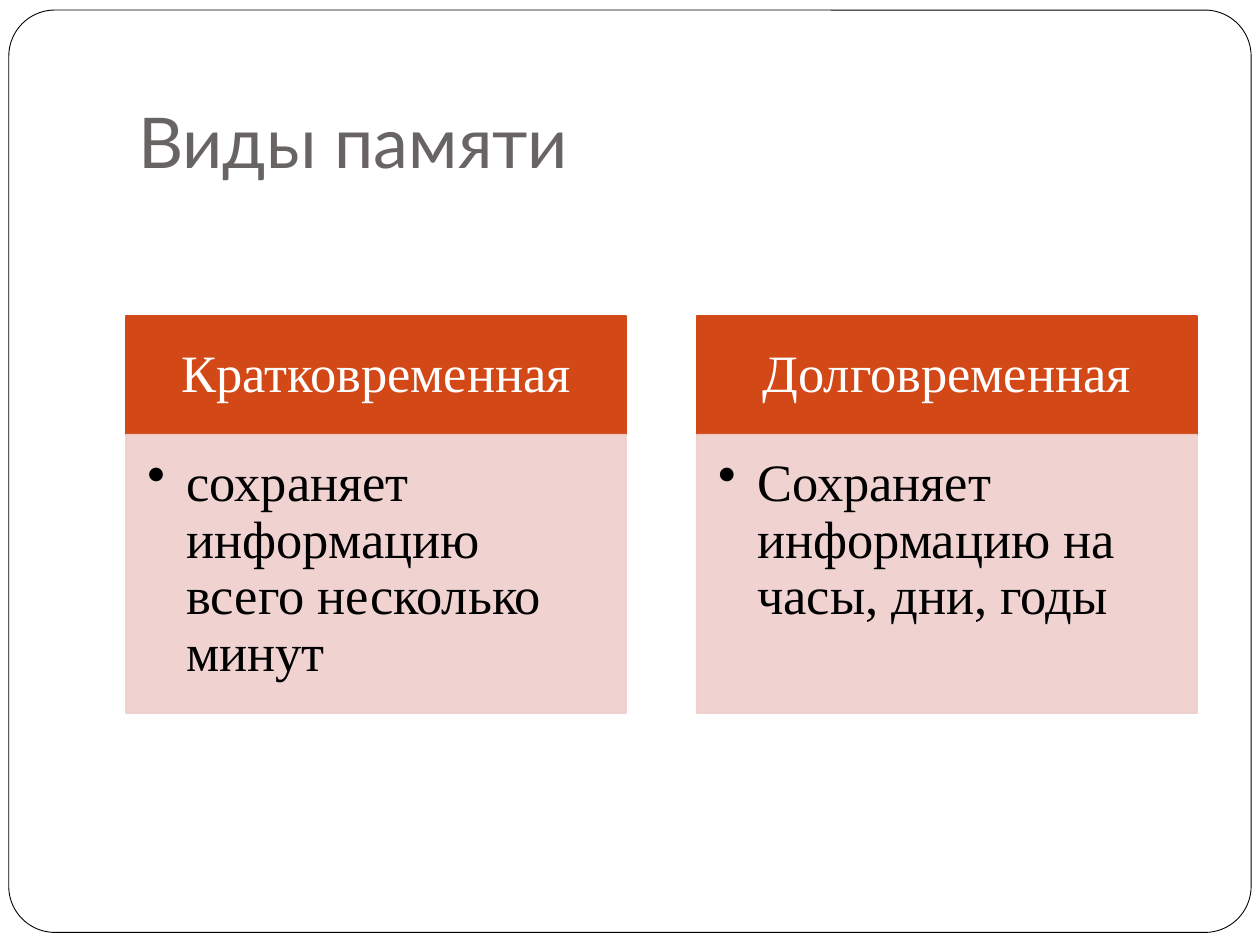
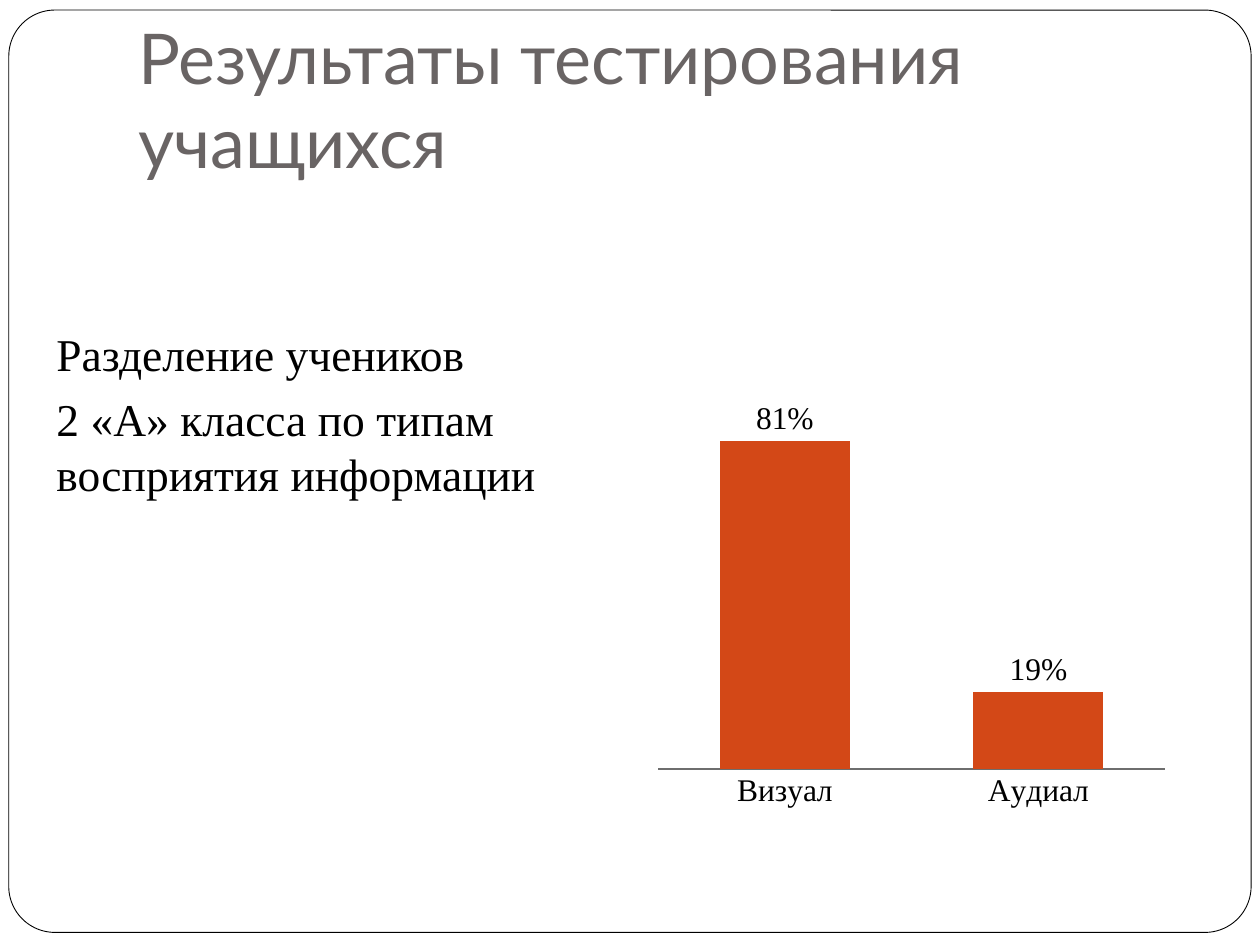
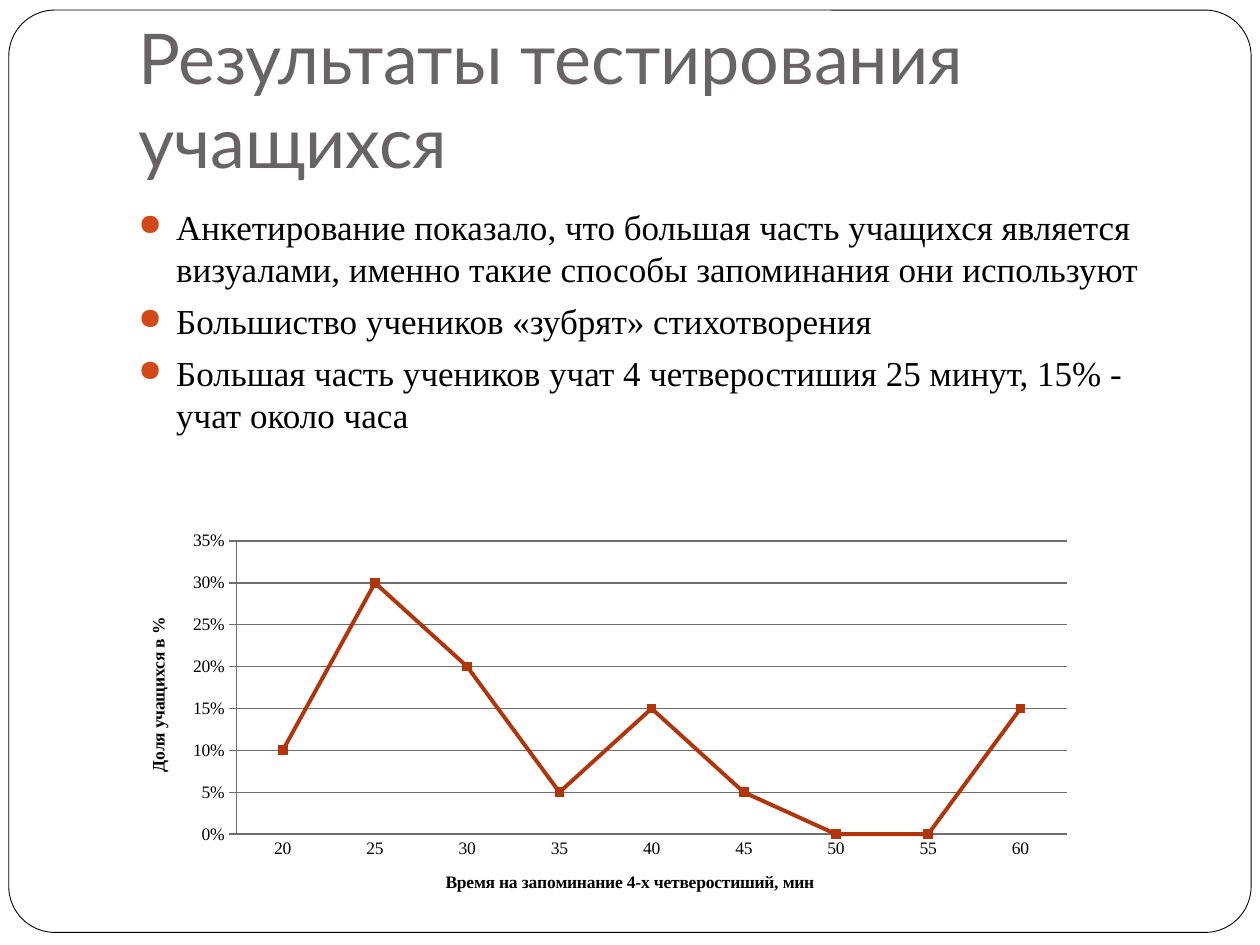
from lxml import etree
from pptx import Presentation
from pptx import util as u
from pptx.chart import data
from pptx.dml import color
from pptx.enum import chart as ch
from pptx.enum import shapes, text
from pptx.oxml import ns

ORANGE, PINK, GRAY, BLACK, WHITE = "D34817", "EFCFCC", "696464", "000000", "FFFFFF"
RUST, AXIS = "B1340B", "6E6E6E"
SERIF = "Times New Roman"


def rgb(value):
    return color.RGBColor.from_string(value)


def write(tf, lines, size, fill, font=SERIF, insets=(0.1, 0.05, 0.1, 0.05),
          anchor=text.MSO_ANCHOR.TOP, align=text.PP_ALIGN.LEFT,
          before=0, spacing=1.0, bullet=None, indent=0, bullet_fill=BLACK, bullet_size=100):
    tf.word_wrap = True
    tf.vertical_anchor = anchor
    tf.margin_left, tf.margin_top, tf.margin_right, tf.margin_bottom = map(u.Inches, insets)
    for i, line in enumerate(lines):
        p = tf.add_paragraph() if i else tf.paragraphs[0]
        p.alignment = align
        p.line_spacing = spacing
        p.space_before = u.Pt(before)
        if bullet:
            pPr = p._p.get_or_add_pPr()
            pPr.set("marL", str(u.Inches(indent)))
            pPr.set("indent", str(-u.Inches(indent)))
            buClr = etree.SubElement(pPr, ns.qn("a:buClr"))
            etree.SubElement(buClr, ns.qn("a:srgbClr"), val=bullet_fill)
            etree.SubElement(pPr, ns.qn("a:buSzPct"), val=str(bullet_size * 1000))
            etree.SubElement(pPr, ns.qn("a:buChar"), char=bullet)
        r = p.add_run()
        r.text = line
        r.font.name = font
        r.font.size = u.Pt(size)
        r.font.color.rgb = rgb(fill)


prs = Presentation()
prs.slide_width = u.Inches(10)
prs.slide_height = u.Inches(7.5)

slides = []
for title in ["Виды памяти"] + ["Результаты тестирования учащихся"] * 2:
    s = prs.slides.add_slide(prs.slide_layouts[6])
    sp = s.shapes.add_shape(shapes.MSO_SHAPE.ROUNDED_RECTANGLE,
                            u.Inches(0.07), u.Inches(0.08), u.Inches(9.86), u.Inches(7.32))
    sp.adjustments[0] = 0.05
    sp.shadow.inherit = False
    sp.fill.solid()
    sp.fill.fore_color.rgb = rgb(WHITE)
    sp.line.color.rgb = rgb(BLACK)
    sp.line.width = u.Pt(0.5)
    tb = s.shapes.add_textbox(u.Inches(1), u.Inches(0.3), u.Inches(8.5), u.Inches(1.25))
    write(tb.text_frame, [title], 40, GRAY, "Lato", (0.1, 0.05, 0.1, 0.1), text.MSO_ANCHOR.BOTTOM)
    slides.append(s)
memory, types, timing = slides

cards = [
    ("Кратковременная", "сохраняет информацию всего несколько минут"),
    ("Долговременная", "Сохраняет информацию на часы, дни, годы"),
]
for i, (heading, detail) in enumerate(cards):
    left = 1 + i * 4.53
    for top, height, fill in [(2.51, 0.94, ORANGE), (3.45, 2.21, PINK)]:
        sp = memory.shapes.add_shape(shapes.MSO_SHAPE.RECTANGLE, u.Inches(left),
                                     u.Inches(top), u.Inches(3.97), u.Inches(height))
        sp.shadow.inherit = False
        sp.fill.solid()
        sp.fill.fore_color.rgb = rgb(fill)
        sp.line.color.rgb = rgb(fill)
        sp.line.width = u.Pt(1)
        if fill == ORANGE:
            write(sp.text_frame, [heading], 30, WHITE, insets=(0.23, 0.13, 0.23, 0.13),
                  anchor=text.MSO_ANCHOR.MIDDLE, align=text.PP_ALIGN.CENTER, spacing=0.9)
        else:
            for clr in sp._element.spPr.iter(ns.qn("a:srgbClr")):
                etree.SubElement(clr, ns.qn("a:alpha"), val="90000")
            write(sp.text_frame, [detail], 30, BLACK, insets=(0.17, 0.17, 0.23, 0.26),
                  spacing=0.9, bullet="•", indent=0.31)

tb = types.shapes.add_textbox(u.Inches(0.35), u.Inches(2.54), u.Inches(4.57), u.Inches(4.9))
write(tb.text_frame, ["Разделение учеников", "2 «А» класса по типам восприятия информации"],
      26, BLACK, before=5.8)

tb = timing.shapes.add_textbox(u.Inches(1), u.Inches(1.58), u.Inches(8.5), u.Inches(5))
write(tb.text_frame, [
    "Анкетирование показало, что большая часть учащихся является визуалами, "
    "именно такие способы запоминания они используют",
    "Большиство учеников «зубрят» стихотворения",
    "Большая часть учеников учат 4 четверостишия 25 минут, 15% - учат около часа",
], 20, BLACK, before=5.8, bullet="●", indent=0.3, bullet_fill=ORANGE, bullet_size=85)

minutes = [str(m) for m in range(20, 61, 5)]
shares = [0.1, 0.3, 0.2, 0.05, 0.15, 0.05, 0, 0, 0.15]
specs = [
    (types, ch.XL_CHART_TYPE.COLUMN_CLUSTERED, (5.16, 2.96, 4.25, 4.02), 18, 0.9,
     ["Визуал", "Аудиал"], [0.81, 0.19], (0.015, 0.063, 0.947, 0.719)),
    (timing, ch.XL_CHART_TYPE.LINE_MARKERS, (1.09, 4.14, 7.58, 3.21), 10, 0.35,
     minutes, shares, (0.104, 0.048, 0.869, 0.725)),
]
charts = []
for s, kind, box, size, top, cats, vals, plot_box in specs:
    cd = data.CategoryChartData(number_format="0%")
    cd.categories = cats
    cd.add_series("Series 1", vals)
    chart = s.shapes.add_chart(kind, *map(u.Inches, box), cd).chart
    chart.has_title = False
    chart.has_legend = False
    chart.font.name = SERIF
    chart.font.size = u.Pt(size)
    chart.font.color.rgb = rgb(BLACK)
    chart.plots[0].vary_by_categories = False
    cat, val = chart.category_axis, chart.value_axis
    cat.major_tick_mark = ch.XL_TICK_MARK.NONE
    cat.format.line.color.rgb = rgb(AXIS)
    val.minimum_scale = 0
    val.maximum_scale = top
    val.has_major_gridlines = False
    val.tick_labels.number_format = "0%"
    val.tick_labels.number_format_is_linked = False
    area = chart._chartSpace.chart.plotArea
    for old in area.findall(ns.qn("c:layout")):
        area.remove(old)
    layout = etree.Element(ns.qn("c:layout"))
    manual = etree.SubElement(layout, ns.qn("c:manualLayout"))
    settings = [("layoutTarget", "inner"), ("xMode", "edge"), ("yMode", "edge")]
    for tag, value in settings + list(zip("xywh", plot_box)):
        etree.SubElement(manual, ns.qn("c:" + tag), val=str(value))
    area.insert(0, layout)
    charts.append(chart)
columns, curve = charts

columns.value_axis.visible = False
plot = columns.plots[0]
plot.gap_width = 95
plot.series[0].format.fill.solid()
plot.series[0].format.fill.fore_color.rgb = rgb(ORANGE)
plot.has_data_labels = True
labels = plot.data_labels
labels.show_value = True
labels.number_format = "0%"
labels.number_format_is_linked = False
labels.position = ch.XL_LABEL_POSITION.OUTSIDE_END

line = curve.plots[0].series[0]
line.smooth = False
line.format.line.color.rgb = rgb(RUST)
line.format.line.width = u.Pt(2.25)
line.marker.style = ch.XL_MARKER_STYLE.SQUARE
line.marker.size = 5
line.marker.format.fill.solid()
line.marker.format.fill.fore_color.rgb = rgb(RUST)
line.marker.format.line.color.rgb = rgb(RUST)
val = curve.value_axis
val.major_unit = 0.05
val.major_tick_mark = ch.XL_TICK_MARK.CROSS
val.format.line.color.rgb = rgb(AXIS)
val.has_major_gridlines = True
val.major_gridlines.format.line.color.rgb = rgb(AXIS)
for axis, caption in [(curve.category_axis, "Время на запоминание 4-х четверостиший, мин"),
                      (val, "Доля учащихся в %")]:
    r = axis.axis_title.text_frame.paragraphs[0].add_run()
    r.text = caption
    r.font.name = SERIF
    r.font.size = u.Pt(10)
    r.font.bold = True
    r.font.color.rgb = rgb(BLACK)

prs.save("out.pptx")
